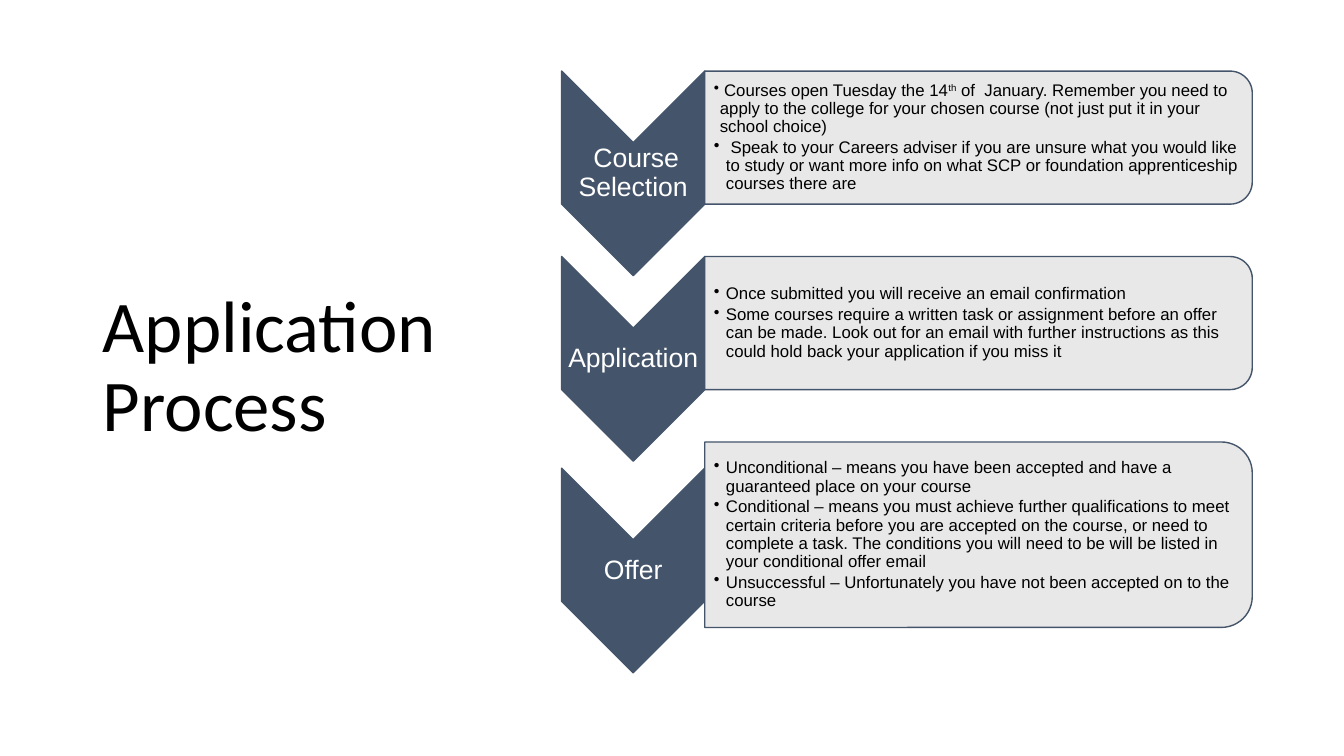
from dataclasses import dataclass

from lxml.etree import SubElement
from pptx import Presentation
from pptx.dml.color import RGBColor
from pptx.enum.shapes import MSO_SHAPE as Preset
from pptx.enum.text import MSO_ANCHOR as Anchor, PP_ALIGN as Align
from pptx.oxml.ns import qn
from pptx.shapes.autoshape import Shape
from pptx.shapes.shapetree import GroupShapes
from pptx.text.text import TextFrame, _Paragraph as Paragraph
from pptx.util import Inches, Pt


@dataclass(frozen=True)
class Theme:
    slate: RGBColor = RGBColor(0x44, 0x54, 0x6A)
    panel: RGBColor = RGBColor(0xE7, 0xE6, 0xE6)
    ink: RGBColor = RGBColor(0, 0, 0)
    white: RGBColor = RGBColor(255, 255, 255)
    title_font: str = "Calibri"
    body_font: str = "Arial"
    title_size: float = 52
    label_size: float = 19
    body_size: float = 12
    lead_size: float = 11
    line_spacing: float = 0.9
    panel_opacity: int = 90


@dataclass(frozen=True)
class Span:
    text: str
    size: float
    font: str
    superscript: bool = False


@dataclass(frozen=True)
class Bullet:
    spans: list[Span]
    indent: float = 0.12


@dataclass(frozen=True)
class Step:
    label: list[Span]
    bullets: list[Bullet]
    panel_height: float = 1.32


THEME = Theme()


def body(text: str, size: float = THEME.body_size, superscript: bool = False) -> Span:
    return Span(text, size, THEME.body_font, superscript)


def label(text: str, font: str = THEME.body_font) -> Span:
    return Span(text, THEME.label_size, font)


STEPS = [
    Step(
        [label(" ", THEME.title_font), label("Course Selection")],
        [
            Bullet([
                body(" ", THEME.lead_size),
                body("Courses open Tuesday the 14"),
                body("th", superscript=True),
                body(" of  January. Remember you need to apply to the college for your "
                     "chosen course (not just put it in your school choice)"),
            ], indent=0.06),
            Bullet([body(" Speak to your Careers adviser if you are unsure what you would "
                         "like to study or want more info on what SCP or foundation "
                         "apprenticeship courses there are")]),
        ],
    ),
    Step(
        [label("Application")],
        [
            Bullet([body("Once submitted you will receive an email confirmation")]),
            Bullet([body("Some courses require a written task or assignment before an offer "
                         "can be made. Look out for an email with further instructions as "
                         "this could hold back your application if you miss it")]),
        ],
    ),
    Step(
        [label("Offer")],
        [
            Bullet([body("Unconditional – means you have been accepted and have a guaranteed "
                         "place on your course")]),
            Bullet([body("Conditional – means you must achieve further qualifications to "
                         "meet certain criteria before you are accepted on the course, or "
                         "need to complete a task. The conditions you will need to be will "
                         "be listed in your conditional offer email")]),
            Bullet([body("Unsuccessful – Unfortunately you have not been accepted on to the "
                         "course")]),
        ],
        panel_height=1.84,
    ),
]

FIRST_TOP = 0.705
PANEL_GAP = 0.52
PANEL_LEFT, PANEL_WIDTH = 6.99, 5.43
BULLETS_WIDTH = 5.36
CHEVRON_LEFT, CHEVRON_WIDTH, CHEVRON_HEIGHT = 5.57, 1.42, 2.03
CHEVRON_DROP = 0.355
LABEL_HEIGHT = 0.61


def add_spans(para: Paragraph, spans: list[Span], *, color: RGBColor) -> None:
    para.line_spacing = THEME.line_spacing
    for span in spans:
        run = para.add_run()
        run.text = span.text
        run.font.size = Pt(span.size)
        run.font.name = span.font
        run.font.color.rgb = color
        if span.superscript:
            run._r.get_or_add_rPr().set("baseline", "30000")


def add_turned_shape(shapes: GroupShapes, preset: Preset, *, center: tuple[float, float],
                     width: float, height: float, fill: RGBColor) -> Shape:
    """Add a preset turned by 90 degrees that shows at the given width and height."""
    x, y = center
    shape = shapes.add_shape(preset, Inches(x - height / 2), Inches(y - width / 2),
                             Inches(height), Inches(width))
    shape.rotation = 90
    shape.shadow.inherit = False
    shape.fill.solid()
    shape.fill.fore_color.rgb = fill
    shape.line.color.rgb = THEME.slate
    shape.line.width = Pt(1)
    return shape


def add_text_frame(shapes: GroupShapes, *, left: float, middle: float, width: float,
                   height: float, inset_left: float = 0.01) -> TextFrame:
    box = shapes.add_textbox(Inches(left), Inches(middle - height / 2),
                             Inches(width), Inches(height))
    frame = box.text_frame
    frame.word_wrap = True
    frame.vertical_anchor = Anchor.MIDDLE
    frame.margin_left = Inches(inset_left)
    frame.margin_top = frame.margin_right = frame.margin_bottom = Inches(0.01)
    return frame


def add_bullets(frame: TextFrame, bullets: list[Bullet]) -> None:
    for index, bullet in enumerate(bullets):
        para = frame.add_paragraph() if index else frame.paragraphs[0]
        para.level = 1
        para.space_after = Pt(2)
        add_spans(para, bullet.spans, color=THEME.ink)
        properties = para._p.get_or_add_pPr()
        properties.set("marL", str(Inches(bullet.indent)))
        properties.set("indent", str(-Inches(bullet.indent)))
        SubElement(properties, qn("a:buChar"), char="•")


def add_step(shapes: GroupShapes, step: Step, top: float) -> None:
    middle = top + step.panel_height / 2
    chevron_middle = middle + CHEVRON_DROP
    add_turned_shape(shapes, Preset.CHEVRON,
                     center=(CHEVRON_LEFT + CHEVRON_WIDTH / 2, chevron_middle),
                     width=CHEVRON_WIDTH, height=CHEVRON_HEIGHT, fill=THEME.slate)
    frame = add_text_frame(shapes, left=CHEVRON_LEFT, middle=chevron_middle,
                           width=CHEVRON_WIDTH, height=LABEL_HEIGHT)
    frame.paragraphs[0].alignment = Align.CENTER
    add_spans(frame.paragraphs[0], step.label, color=THEME.white)

    panel = add_turned_shape(shapes, Preset.ROUND_2_SAME_RECTANGLE,
                             center=(PANEL_LEFT + PANEL_WIDTH / 2, middle),
                             width=PANEL_WIDTH, height=step.panel_height, fill=THEME.panel)
    color = panel._element.spPr.find(qn("a:solidFill")).find(qn("a:srgbClr"))
    SubElement(color, qn("a:alpha"), val=str(THEME.panel_opacity * 1000))
    frame = add_text_frame(shapes, left=PANEL_LEFT, middle=middle, width=BULLETS_WIDTH,
                           height=step.panel_height * 0.9, inset_left=0.09)
    add_bullets(frame, step.bullets)


def main() -> None:
    deck = Presentation()
    deck.slide_width, deck.slide_height = Inches(13.33), Inches(7.5)
    page = deck.slides.add_slide(deck.slide_layouts[5])

    title = page.shapes.title
    title.left, title.top = Inches(0.92), Inches(0.61)
    title.width, title.height = Inches(3.69), Inches(6.09)
    title.text_frame.vertical_anchor = Anchor.MIDDLE
    para = title.text_frame.paragraphs[0]
    para.alignment = Align.LEFT
    add_spans(para, [Span("Application Process", THEME.title_size, THEME.title_font)],
              color=THEME.ink)

    diagram = page.shapes.add_group_shape().shapes
    top = FIRST_TOP
    for step in STEPS:
        add_step(diagram, step, top)
        top += step.panel_height + PANEL_GAP
    deck.save("out.pptx")


if __name__ == "__main__":
    main()
